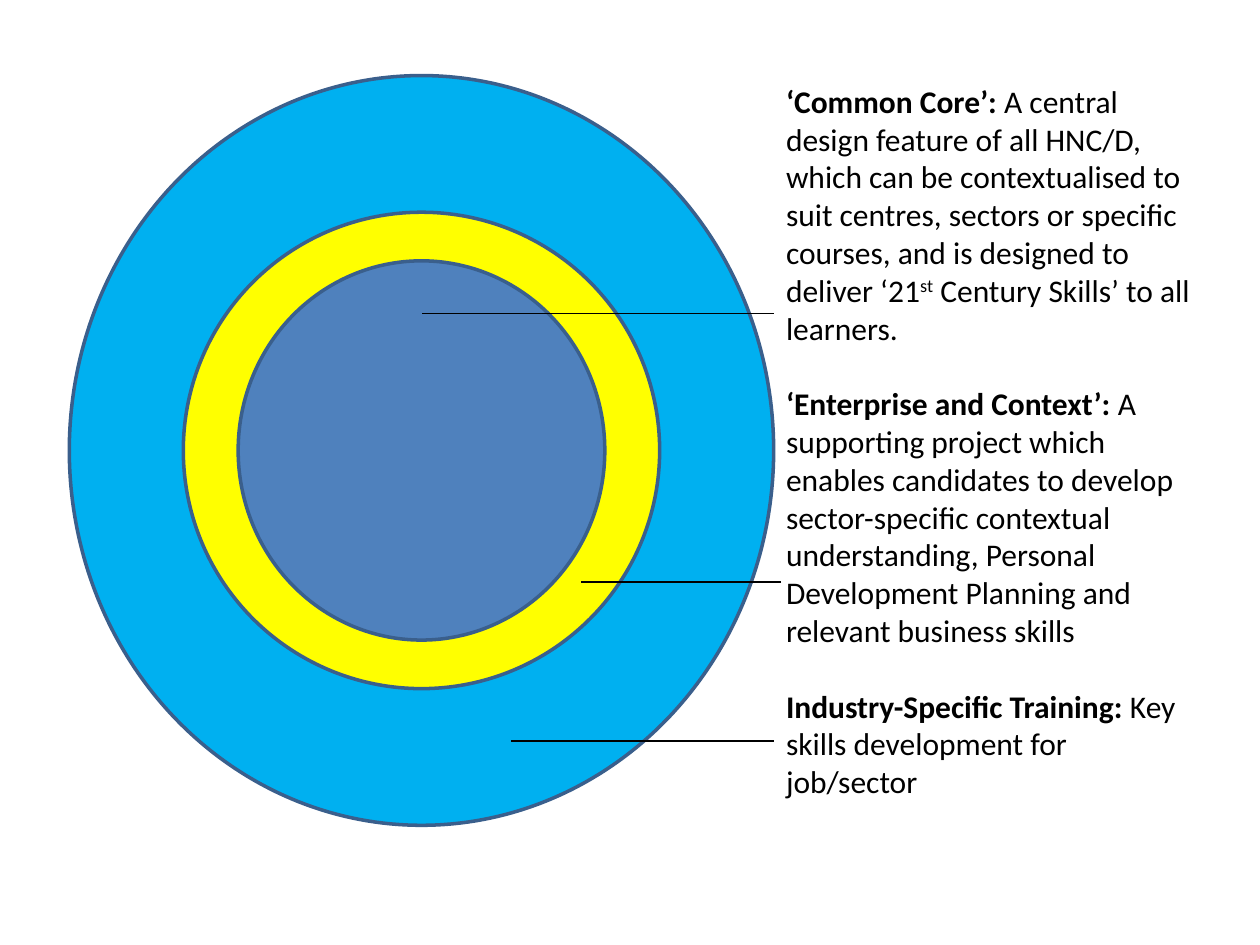
from lxml import etree
from pptx import Presentation
from pptx.dml.color import RGBColor
from pptx.enum.shapes import MSO_CONNECTOR, MSO_SHAPE
from pptx.enum.text import MSO_AUTO_SIZE
from pptx.oxml.ns import qn
from pptx.util import Pt

ELLIPSE = MSO_SHAPE.OVAL
STRAIGHT = MSO_CONNECTOR.STRAIGHT
GROW_TO_TEXT = MSO_AUTO_SIZE.SHAPE_TO_FIT_TEXT

SKY = RGBColor(0x00, 0xB0, 0xF0)
YELLOW = RGBColor(0xFF, 0xFF, 0x00)
BLUE = RGBColor(0x4F, 0x81, 0xBD)
OUTLINE = RGBColor(0x3A, 0x5F, 0x8C)
BLACK = RGBColor(0x00, 0x00, 0x00)

# Boxes are left, top, width, height in points.
RINGS_BOX = (39.6, 43.2, 402.5, 428.4)
TEXT_BOX = (442.1, 43.2, 252, 421.9)

# Width, height and colour of each ring, outermost first.
RINGS = [
    (402.5, 428.4, SKY),
    (272.2, 272.2, YELLOW),
    (209.5, 216.7, BLUE),
]

# Start x, end x and y of each leader, from the corner of the rings box.
LEADERS = [
    (402.5, 201.6, 136.1),
    (406.8, 292.3, 289.4),
    (402.5, 252.7, 380.2),
]

# Each description is a list of (text, bold, superscript).
DESCRIPTIONS = [
    [
        ("‘Common Core’: ", True, False),
        ("A central design feature of all HNC/D, which can be contextualised "
         "to suit centres, sectors or specific courses, and is designed to "
         "deliver ‘21", False, False),
        ("st", False, True),
        (" Century Skills’ to all learners.", False, False),
    ],
    [
        ("‘Enterprise and Context’: ", True, False),
        ("A supporting project which enables candidates to develop "
         "sector-specific contextual understanding, Personal Development "
         "Planning and relevant business skills", False, False),
    ],
    [
        ("Industry-Specific Training: ", True, False),
        ("Key skills development for job/sector", False, False),
    ],
]


def add_rings(page, box):
    """Draw the rings around the shared centre of the box."""
    left, top, box_width, box_height = box
    for width, height, colour in RINGS:
        ring = page.shapes.add_shape(
            ELLIPSE,
            Pt(left + (box_width - width) / 2),
            Pt(top + (box_height - height) / 2),
            Pt(width), Pt(height))
        ring.shadow.inherit = False
        ring.fill.solid()
        ring.fill.fore_color.rgb = colour
        ring.line.color.rgb = OUTLINE
        ring.line.width = Pt(2)


def add_descriptions(page, box):
    text_box = page.shapes.add_textbox(*map(Pt, box))
    frame = text_box.text_frame
    frame.word_wrap = True
    frame.auto_size = GROW_TO_TEXT
    for index, description in enumerate(DESCRIPTIONS):
        para = frame.add_paragraph() if index else frame.paragraphs[0]
        if index:
            para.space_before = Pt(21.6)
        for text, bold, superscript in description:
            span = para.add_run()
            span.text = text
            span.font.name = "Calibri"
            span.font.size = Pt(18)
            span.font.bold = bold
            span.font.color.rgb = BLACK
            if superscript:
                span._r.get_or_add_rPr().set("baseline", "30000")


def add_leaders(page, box):
    left, top = box[:2]
    for start, end, y in LEADERS:
        leader = page.shapes.add_connector(
            STRAIGHT, Pt(left + start), Pt(top + y), Pt(left + end), Pt(top + y))
        leader.line.color.rgb = BLACK
        leader.line.width = Pt(0.75)
        etree.SubElement(leader._element.spPr, qn("a:effectLst"))


def main():
    deck = Presentation()
    deck.slide_width, deck.slide_height = Pt(720), Pt(540)
    page = deck.slides.add_slide(deck.slide_layouts[6])
    add_rings(page, RINGS_BOX)
    add_descriptions(page, TEXT_BOX)
    add_leaders(page, RINGS_BOX)
    deck.save("out.pptx")


if __name__ == "__main__":
    main()
